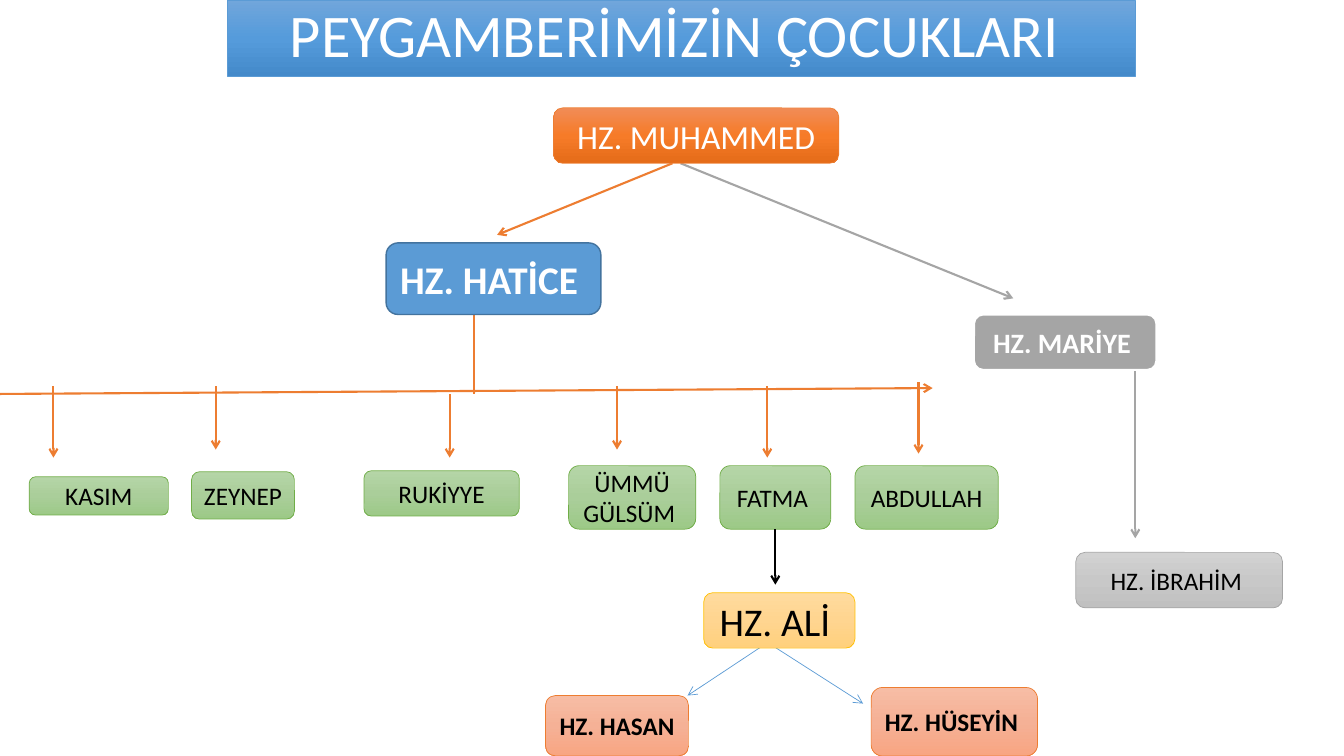
"""Build a family tree slide of the Prophet's children."""
from copy import deepcopy
from dataclasses import dataclass

from lxml.etree import SubElement
from pptx import Presentation
from pptx.dml.color import RGBColor as RGB
from pptx.enum.shapes import MSO_CONNECTOR as LINE, MSO_SHAPE as SHAPE
from pptx.enum.text import MSO_ANCHOR as ANCHOR, PP_ALIGN as ALIGN
from pptx.oxml.ns import qn
from pptx.util import Inches, Pt


@dataclass(frozen=True)
class Style:
    fill: tuple
    line: str
    text: str = "000000"
    size: float = 18
    bold: bool = False
    width: float = 0.5


class Theme:
    font = "Calibri"
    orange, gray, blue, black = "ED7D31", "A5A5A5", "5B9BD5", "000000"
    title = Style(("71A6DB", "559BDB", "448ACA"), blue, "FFFFFF", 43.2)
    father = Style(("F18C57", "F67B28", "E56C19"), orange, "FFFFFF", 24)
    hatice = Style((blue,), "43739E", "FFFFFF", 28, True, 1)
    mariye = Style((gray,), "FFFFFF", "FFFFFF", 20, True, 1.5)
    child = Style(("B5D5A7", "AACE9A", "9CC987"), "70AD47")
    ibrahim = Style(("D2D2D2", "C8C8C8", "C0C0C0"), gray)
    ali = Style(("FFDB9E", "FFD590", "FFD07C"), "FFC000", size=28)
    grandson = Style(("F7BDA5", "F5B196", "F8A582"), orange, bold=True)


BOXES = [
    ("HZ. MUHAMMED", 5.49, 1.07, 2.83, 0.55, Theme.father),
    ("HZ. HATİCE ", 3.83, 2.41, 2.13, 0.71, Theme.hatice),
    ("HZ. MARİYE ", 9.66, 3.12, 1.81, 0.55, Theme.mariye),
    ("KASIM", 0.29, 4.73, 1.38, 0.38, Theme.child),
    ("ZEYNEP", 1.9, 4.68, 1.02, 0.47, Theme.child),
    ("RUKİYYE", 3.61, 4.67, 1.54, 0.45, Theme.child),
    ("ÜMMÜ GÜLSÜM ", 5.64, 4.62, 1.26, 0.63, Theme.child),
    ("FATMA ", 7.14, 4.62, 1.1, 0.63, Theme.child),
    ("ABDULLAH ", 8.48, 4.62, 1.42, 0.63, Theme.child),
    ("HZ. İBRAHİM ", 10.67, 5.48, 2.05, 0.55, Theme.ibrahim),
    ("HZ. HASAN", 5.41, 6.9, 1.42, 0.6, Theme.grandson),
    ("HZ. HÜSEYİN ", 8.64, 6.82, 1.65, 0.68, Theme.grandson),
    ("HZ. ALİ ", 6.98, 5.88, 1.5, 0.55, Theme.ali),
]

CHILD_ARROWS = [
    (0.53, 3.83, 4.54), (2.14, 3.83, 4.46), (4.46, 3.91, 4.54),
    (6.12, 3.83, 4.46), (7.61, 3.83, 4.54), (9.11, 3.79, 4.5),
]


def paint(sp, style):
    """Apply a solid or three-stop gradient fill and an outline."""
    if len(style.fill) == 1:
        sp.fill.solid()
        sp.fill.fore_color.rgb = RGB.from_string(style.fill[0])
    else:
        sp.fill.gradient()
        sp.fill.gradient_angle = 270
        stops = sp._element.spPr.find(qn("a:gradFill")).find(qn("a:gsLst"))
        stops.insert(1, deepcopy(stops[0]))
        for i, (stop, color) in enumerate(zip(sp.fill.gradient_stops, style.fill)):
            stop.position = i / 2
            stop.color.rgb = RGB.from_string(color)
    sp.line.color.rgb = RGB.from_string(style.line)
    sp.line.width = Pt(style.width)


def write(sp, text, style):
    """Put centred text into a shape."""
    tf = sp.text_frame
    tf.text = text
    tf.word_wrap = True
    tf.vertical_anchor = ANCHOR.MIDDLE
    p = tf.paragraphs[0]
    p.alignment = ALIGN.CENTER
    p.font.name = Theme.font
    p.font.size = Pt(style.size)
    p.font.bold = style.bold
    p.font.color.rgb = RGB.from_string(style.text)
    return p


def add_title(s, text):
    """Format the title placeholder as the banner."""
    sp = s.shapes.title
    sp.left, sp.top, sp.width, sp.height = map(Inches, (2.26, 0, 9, 0.76))
    paint(sp, Theme.title)
    write(sp, text, Theme.title).line_spacing = 0.9


def add_person(s, text, x, y, w, h, style):
    """Add a rounded box with a name."""
    sp = s.shapes.add_shape(SHAPE.ROUNDED_RECTANGLE, *map(Inches, (x, y, w, h)))
    sp.shadow.inherit = False
    paint(sp, style)
    write(sp, text, style)
    return sp


def add_line(s, x1, y1, x2, y2, color=Theme.orange, width=1.5, ends=("tailEnd",)):
    """Add a straight connector with arrowheads at the named ends."""
    cx = s.shapes.add_connector(LINE.STRAIGHT, *map(Inches, (x1, y1, x2, y2)))
    cx.line.color.rgb = RGB.from_string(color)
    cx.line.width = Pt(width)
    for end in ends:
        SubElement(cx.line._get_or_add_ln(), qn(f"a:{end}"), type="arrow")
    SubElement(cx._element.spPr, qn("a:effectLst"))
    return cx


def main():
    """Build and save the slide."""
    prs = Presentation()
    prs.slide_width, prs.slide_height = Inches(13.33), Inches(7.5)
    s = prs.slides.add_slide(prs.slide_layouts[5])
    add_title(s, "PEYGAMBERİMİZİN ÇOCUKLARI ")

    add_line(s, 6.67, 1.62, 4.93, 2.33)
    add_line(s, 6.75, 1.62, 10.05, 2.96, Theme.gray)
    add_line(s, 11.26, 3.68, 11.26, 5.34, Theme.gray)
    add_line(s, 4.7, 3.12, 4.7, 3.91, ends=())
    add_line(s, -0.27, 3.91, 9.25, 3.85, ends=("headEnd", "tailEnd"))
    for x, top, bottom in CHILD_ARROWS:
        add_line(s, x, top, x, bottom)
    add_line(s, 7.65, 6.35, 6.82, 6.9, Theme.blue, 0.5)
    add_line(s, 7.45, 6.27, 8.56, 6.98, Theme.blue, 0.5)

    people = {box[0].strip(): add_person(s, *box) for box in BOXES}
    marriage = add_line(s, 7.69, 5.25, 7.69, 5.8, Theme.black)
    marriage.begin_connect(people["FATMA"], 2)
    prs.save("out.pptx")


if __name__ == "__main__":
    main()
